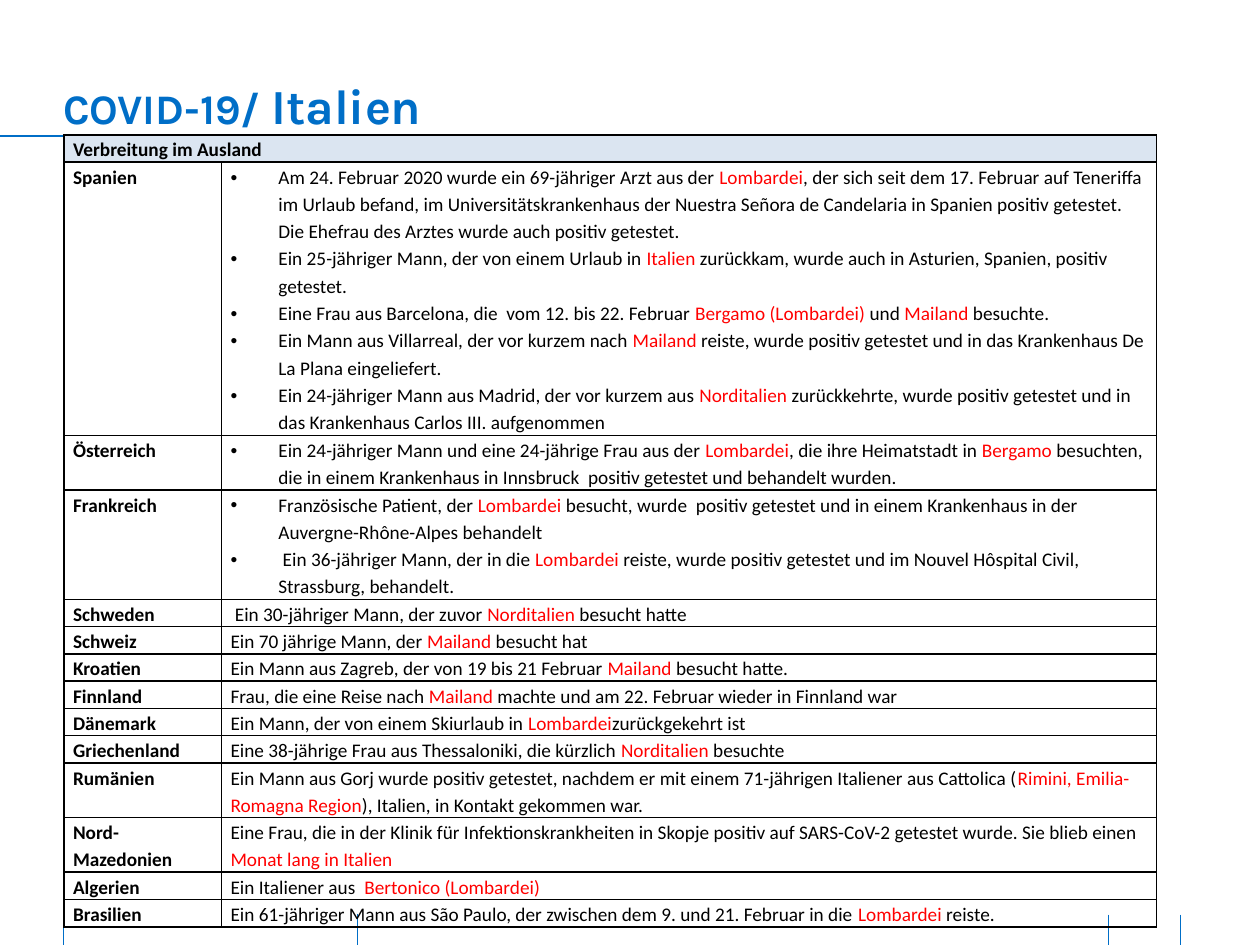
from lxml.etree import SubElement as Sub
from pptx import Presentation as Deck
from pptx.dml.color import RGBColor as Color
from pptx.enum.shapes import MSO_CONNECTOR as Link
from pptx.enum.text import MSO_ANCHOR as Anchor
from pptx.oxml import parse_xml
from pptx.oxml.ns import nsdecls, qn
from pptx.util import Inches, Pt

THEME = {
    "blue": "006EC7", "black": "000000", "red": "FF0000", "head": "DBE5F1",
    "title": "Karla", "body": "Calibri",
    "small": 24, "large": 28, "text": 11,
}

TITLE = [("COVID-19/ ", "small"), ("Italien", "large")]
HEAD = "Verbreitung im Ausland"

# Country, lines of text, text; parts between bars are red, lists are bulleted
ROWS = [
    ("Spanien", 10, [
        "Am 24. Februar 2020 wurde ein 69-jähriger Arzt aus der |Lombardei|, der sich seit dem "
        "17. Februar auf Teneriffa im Urlaub befand, im Universitätskrankenhaus der Nuestra "
        "Señora de Candelaria in Spanien positiv getestet.  Die Ehefrau des Arztes wurde auch "
        "positiv getestet.",
        "Ein 25-jähriger Mann, der von einem Urlaub in |Italien |zurückkam, wurde auch in "
        "Asturien, Spanien, positiv getestet.",
        "Eine Frau aus Barcelona, die  vom 12. bis 22. Februar |Bergamo (Lombardei) |und "
        "|Mailand |besuchte.",
        "Ein Mann aus Villarreal, der vor kurzem nach |Mailand |reiste, wurde positiv getestet "
        "und in das Krankenhaus De La Plana eingeliefert.",
        "Ein 24-jähriger Mann aus Madrid, der vor kurzem aus |Norditalien |zurückkehrte, wurde "
        "positiv getestet und in das Krankenhaus Carlos III. aufgenommen",
    ]),
    ("Österreich", 2, [
        "Ein 24-jähriger Mann und eine 24-jährige Frau aus der |Lombardei|, die ihre "
        "Heimatstadt in |Bergamo |besuchten,  die in einem Krankenhaus in Innsbruck  positiv "
        "getestet und behandelt wurden.",
    ]),
    ("Frankreich", 4, [
        "Französische Patient, der |Lombardei |besucht, wurde  positiv getestet und in einem "
        "Krankenhaus in der Auvergne-Rhône-Alpes behandelt",
        " Ein 36-jähriger Mann, der in die |Lombardei| reiste, wurde positiv getestet und im "
        "Nouvel Hôspital Civil, Strassburg, behandelt.",
    ]),
    ("Schweden", 1, " Ein 30-jähriger Mann, der zuvor |Norditalien| besucht hatte"),
    ("Schweiz", 1, "Ein 70 jährige Mann, der |Mailand |besucht hat"),
    ("Kroatien", 1, "Ein Mann aus Zagreb, der von 19 bis 21 Februar |Mailand |besucht hatte."),
    ("Finnland", 1, "Frau, die eine Reise nach |Mailand| machte und am 22. Februar wieder in "
                    "Finnland war"),
    ("Dänemark", 1, "Ein Mann, der von einem Skiurlaub in |Lombardei|zurückgekehrt ist"),
    ("Griechenland", 1, "Eine 38-jährige Frau aus Thessaloniki, die kürzlich |Norditalien| "
                        "besuchte"),
    ("Rumänien", 2, "Ein Mann aus Gorj wurde positiv getestet, nachdem er mit einem "
                    "71-jährigen Italiener aus Cattolica (|Rimini, Emilia-Romagna Region|), "
                    "Italien, in Kontakt gekommen war."),
    ("Nord-Mazedonien", 2, "Eine Frau, die in der Klinik für Infektionskrankheiten in Skopje "
                           "positiv auf SARS-CoV-2 getestet wurde. Sie blieb einen |Monat "
                           "lang in Italien"),
    ("Algerien", 1, "Ein Italiener aus  |Bertonico (Lombardei)"),
    ("Brasilien", 1, "Ein 61-jähriger Mann aus São Paulo, der zwischen dem 9. und 21. Februar "
                     "in die |Lombardei |reiste."),
]
COLS = [1.25, 7.42]
LEFT, TOP, HIGH = 0.51, 1.07, 6.29
RULE = 1.08
TICKS = [(2.84, 7.25), (0.5, 7.24), (9.37, 7.26), (8.8, 7.26)]
FOOT = 7.5


def apply(item, form):
    for name, value in form.items():
        setattr(item, name, value)


def add_run(para, text, size, face, color, bold):
    run = para.add_run()
    run.text = text
    apply(run.font, {"size": Pt(THEME[size]), "name": THEME[face], "bold": bold})
    run.font.color.rgb = Color.from_string(THEME[color])


def add_line(slide, start, end, width):
    line = slide.shapes.add_connector(Link.STRAIGHT, *map(Inches, start + end))
    line.line.color.rgb = Color.from_string(THEME["blue"])
    line.line.width = Pt(width)
    Sub(line._element.spPr, qn("a:effectLst"))


def add_title(slide):
    box = slide.shapes.add_textbox(*map(Inches, (0.5, 0.6, 8.85, 0.47)))
    frame = box.text_frame
    apply(frame, {"word_wrap": True, "vertical_anchor": Anchor.BOTTOM, "margin_left": 0,
                  "margin_right": 0, "margin_top": 0, "margin_bottom": 0})
    for text, size in TITLE:
        add_run(frame.paragraphs[0], text, size, "title", "blue", True)


def add_bullet(para):
    props = para._p.get_or_add_pPr()
    props.set("marL", str(Inches(0.38)))
    props.set("indent", str(-Inches(0.38)))
    Sub(props, qn("a:buFont")).set("typeface", "Arial")
    Sub(props, qn("a:buChar")).set("char", "•")


def add_edges(cell):
    props = cell._tc.get_or_add_tcPr()
    for spot, side in enumerate("LRTB"):
        props.insert(spot, parse_xml(
            f'<a:ln{side} {nsdecls("a")} w="{Pt(1)}"><a:solidFill>'
            f'<a:srgbClr val="{THEME["black"]}"/></a:solidFill></a:ln{side}>'))


def fill_cell(cell, text, bold=False, fill=None):
    apply(cell, {"margin_left": Inches(0.07), "margin_right": Inches(0.07),
                 "margin_top": 0, "margin_bottom": 0})
    if fill:
        cell.fill.solid()
        cell.fill.fore_color.rgb = Color.from_string(THEME[fill])
    else:
        cell.fill.background()
    add_edges(cell)
    listed = isinstance(text, list)
    frame = cell.text_frame
    for spot, words in enumerate(text if listed else [text]):
        para = frame.add_paragraph() if spot else frame.paragraphs[0]
        if listed:
            add_bullet(para)
        para.line_spacing = 1.15
        for part, piece in enumerate(words.split("|")):
            if piece:
                add_run(para, piece, "text", "body", "red" if part % 2 else "black", bold)


def add_grid(slide):
    """Share the table height among the rows by their lines of text."""
    lines = [1] + [count for _, count, _ in ROWS]
    pitch = HIGH / sum(lines)
    area = map(Inches, (LEFT, TOP, sum(COLS), HIGH))
    grid = slide.shapes.add_table(len(lines), len(COLS), *area).table
    apply(grid, {"first_row": False, "horz_banding": False})
    for col, wide in zip(grid.columns, COLS):
        col.width = Inches(wide)
    for row, count in zip(grid.rows, lines):
        row.height = Inches(count * pitch)
    grid.cell(0, 0).merge(grid.cell(0, 1))
    fill_cell(grid.cell(0, 0), HEAD, True, "head")
    add_edges(grid.cell(0, 1))
    for spot, (land, _, text) in enumerate(ROWS, 1):
        fill_cell(grid.cell(spot, 0), land, True)
        fill_cell(grid.cell(spot, 1), text)


def main():
    deck = Deck()
    apply(deck, {"slide_width": Inches(10), "slide_height": Inches(7.5)})
    slide = deck.slides.add_slide(deck.slide_layouts[6])
    for left, top in TICKS:
        add_line(slide, (left, top), (left, FOOT), 0.5)
    add_title(slide)
    add_line(slide, (0, RULE), (7.91, RULE), 1.5)
    add_grid(slide)
    deck.save("out.pptx")


if __name__ == "__main__":
    main()
